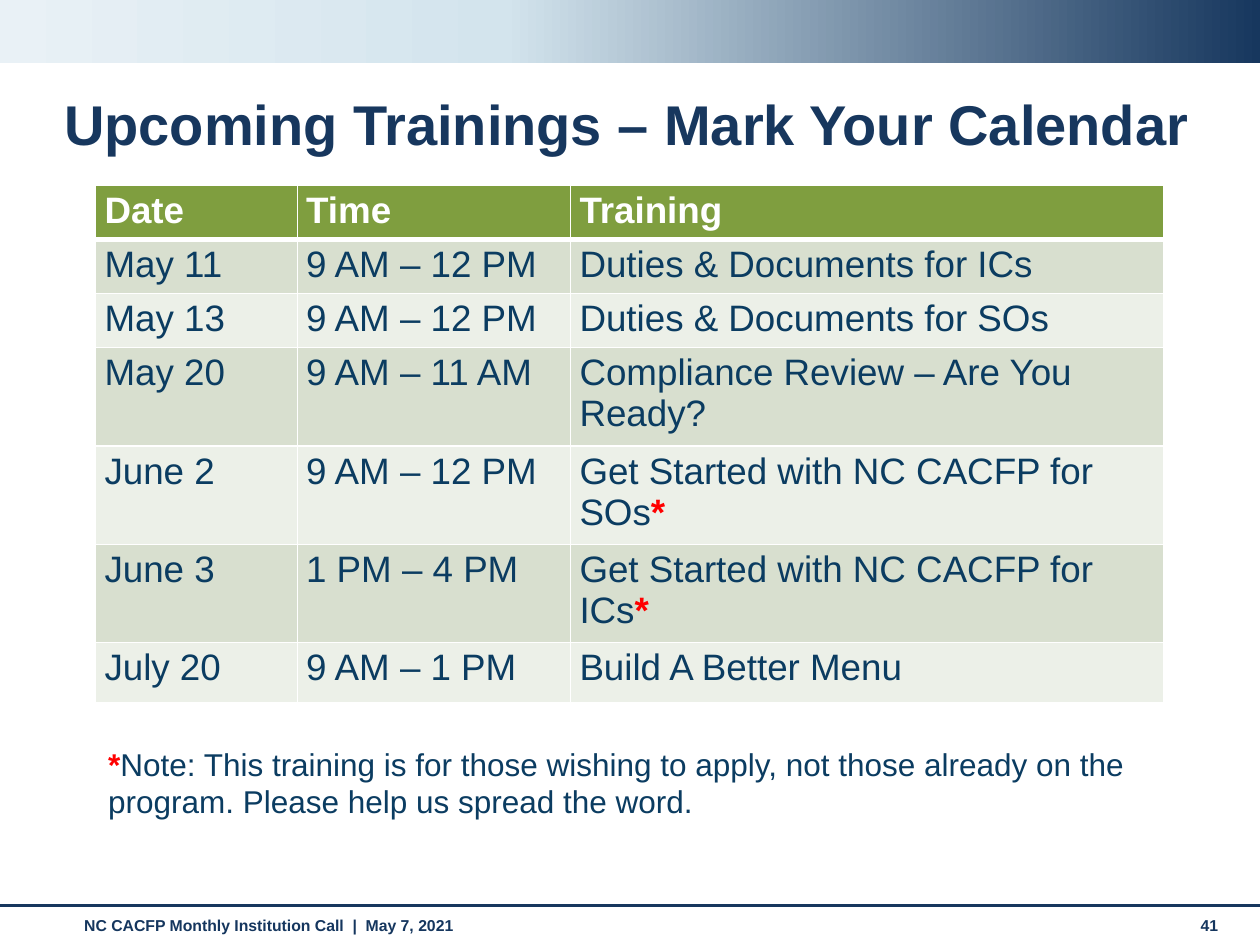
from dataclasses import dataclass
from typing import Any, NamedTuple

from lxml.etree import SubElement
from pptx import Presentation
from pptx.dml.color import RGBColor
from pptx.enum.shapes import MSO_CONNECTOR, MSO_SHAPE
from pptx.enum.text import MSO_ANCHOR, MSO_AUTO_SIZE, PP_ALIGN
from pptx.oxml import parse_xml
from pptx.oxml.ns import nsdecls, qn
from pptx.util import Inches, Pt


@dataclass(frozen=True)
class Theme:
    font: str = "Arial"
    navy: str = "17375E"
    foot: str = "15365E"
    ink: str = "0B3C61"
    red: str = "FF0000"
    white: str = "FFFFFF"
    green: str = "7F9E3F"
    bands: tuple[str, str] = ("D8DFCF", "ECF0E8")
    fade: tuple[tuple[int, str], ...] = ((0, "17375E"), (60, "D3E4ED"), (100, "E9F1F6"))
    head: int = 32
    cell: int = 21
    note: int = 18
    small: int = 9


class Box(NamedTuple):
    """Place on a grid of 100 columns and 75 rows."""
    col: float
    row: float
    wide: float
    high: float


class Run(NamedTuple):
    text: str
    color: str
    bold: bool = False


class Event(NamedTuple):
    date: str
    time: str
    title: str
    high: float
    star: bool = False


T = Theme()
WIDE, HIGH = Inches(10), Inches(7.5)
STAR = Run("*", T.red, True)
COLS = (16, 21.7, 47.1)
EVENTS = (
    Event("Date", "Time", "Training", 4.2),
    Event("May 11", "9 AM – 12 PM", "Duties & Documents for ICs", 4.2),
    Event("May 13", "9 AM – 12 PM", "Duties & Documents for SOs", 4.2),
    Event("May 20", "9 AM – 11 AM", "Compliance Review – Are You Ready?", 7.8),
    Event("June 2", "9 AM – 12 PM", "Get Started with NC CACFP for SOs", 7.8, True),
    Event("June 3", "1 PM – 4 PM", "Get Started with NC CACFP for ICs", 7.8, True),
    Event("July 20", "9 AM – 1 PM", "Build A Better Menu", 4.8),
)


def across(cols: float) -> int:
    return round(WIDE * cols / 100)


def down(rows: float) -> int:
    return round(HIGH * rows / 75)


def place(box: Box) -> tuple[int, int, int, int]:
    return across(box.col), down(box.row), across(box.wide), down(box.high)


def apply(item: Any, **form: Any) -> None:
    for name, value in form.items():
        setattr(item, name, value)


def write(frame: Any, size: int, *runs: Run) -> None:
    para = frame.paragraphs[0]
    para.alignment = PP_ALIGN.LEFT
    for part in runs:
        run = para.add_run()
        run.text = part.text
        apply(run.font, name=T.font, size=Pt(size), bold=part.bold)
        run.font.color.rgb = RGBColor.from_string(part.color)


def label(slide: Any, box: Box, size: int, *runs: Run) -> None:
    frame = slide.shapes.add_textbox(*place(box)).text_frame
    frame.word_wrap = True
    write(frame, size, *runs)


def banner(slide: Any, box: Box) -> None:
    bar = slide.shapes.add_shape(MSO_SHAPE.RECTANGLE, *place(box))
    bar.shadow.inherit = False
    bar.line.fill.background()
    bar.fill.gradient()
    stops = "".join(
        f'<a:gs pos="{pos * 1000}"><a:srgbClr val="{color}"/></a:gs>'
        for pos, color in T.fade)
    old = bar.fill._xPr.find(qn("a:gradFill"))
    old.getparent().replace(old, parse_xml(
        f'<a:gradFill {nsdecls("a")} rotWithShape="1"><a:gsLst>{stops}</a:gsLst>'
        '<a:lin ang="10800000" scaled="0"/></a:gradFill>'))


def rule(slide: Any, row: float) -> None:
    line = slide.shapes.add_connector(
        MSO_CONNECTOR.STRAIGHT, 0, down(row), WIDE, down(row))
    line.line.color.rgb = RGBColor.from_string(T.navy)
    line.line.width = Pt(1.75)
    SubElement(line._element.spPr, qn("a:effectLst"))


def edge(cell: Any, top: int, base: int) -> None:
    """White cell borders, which stand before the fill."""
    sides = {"L": 1, "R": 1, "T": top, "B": base}
    for spot, (side, width) in enumerate(sides.items()):
        cell._tc.get_or_add_tcPr().insert(spot, parse_xml(
            f'<a:ln{side} {nsdecls("a")} w="{Pt(width)}"><a:solidFill>'
            f'<a:srgbClr val="{T.white}"/></a:solidFill></a:ln{side}>'))


def agenda(slide: Any, col: float, row: float) -> None:
    box = Box(col, row, sum(COLS), sum(e.high for e in EVENTS))
    table = slide.shapes.add_table(len(EVENTS), len(COLS), *place(box)).table
    table.horz_banding = False
    for column, wide in zip(table.columns, COLS):
        column.width = across(wide)
    pad = dict(margin_left=Inches(0.07), margin_right=Inches(0.07),
               margin_top=Inches(0.04), margin_bottom=Inches(0.04))
    for r, event in enumerate(EVENTS):
        table.rows[r].height = down(event.high)
        head = r == 0
        fill = T.green if head else T.bands[(r - 1) % 2]
        for c, text in enumerate((event.date, event.time, event.title)):
            cell = table.cell(r, c)
            apply(cell, **pad)
            cell.fill.solid()
            cell.fill.fore_color.rgb = RGBColor.from_string(fill)
            edge(cell, 3 if r == 1 else 1, 3 if head else 1)
            runs = [Run(text, T.white if head else T.ink, head)]
            if event.star and c == len(COLS) - 1:
                runs.append(STAR)
            write(cell.text_frame, T.cell, *runs)


def heading(slide: Any, box: Box, text: str) -> None:
    title = slide.shapes.title
    apply(title, **dict(zip(("left", "top", "width", "height"), place(box))))
    apply(title.text_frame, word_wrap=True, auto_size=MSO_AUTO_SIZE.NONE,
          vertical_anchor=MSO_ANCHOR.MIDDLE)
    write(title.text_frame, T.head, Run(text, T.navy, True))
    title.text_frame.paragraphs[0].line_spacing = 0.9


def main() -> None:
    deck = Presentation()
    apply(deck, slide_width=WIDE, slide_height=HIGH)
    slide = deck.slides.add_slide(deck.slide_layouts[5])

    # Frame: top band, footer rule, footer text and page number
    banner(slide, Box(0, 0, 100, 5))
    rule(slide, 71.9)
    label(slide, Box(5.7, 72.2, 87.4, 2.9), T.small,
          Run("NC CACFP Monthly Institution Call  |  May 7, 2021", T.foot, True))
    label(slide, Box(94.3, 72.2, 4.4, 3), T.small, Run("41", T.foot, True))

    # Content: title, schedule and note
    heading(slide, Box(4.1, 7.1, 91.8, 6), "Upcoming Trainings – Mark Your Calendar")
    agenda(slide, 7.6, 14.7)
    label(slide, Box(7.6, 58.6, 84.8, 7.1), T.note, STAR,
          Run("Note: This training is for those wishing to apply, not those already "
              "on the program. Please help us spread the word.", T.ink))

    deck.save("out.pptx")


if __name__ == "__main__":
    main()
